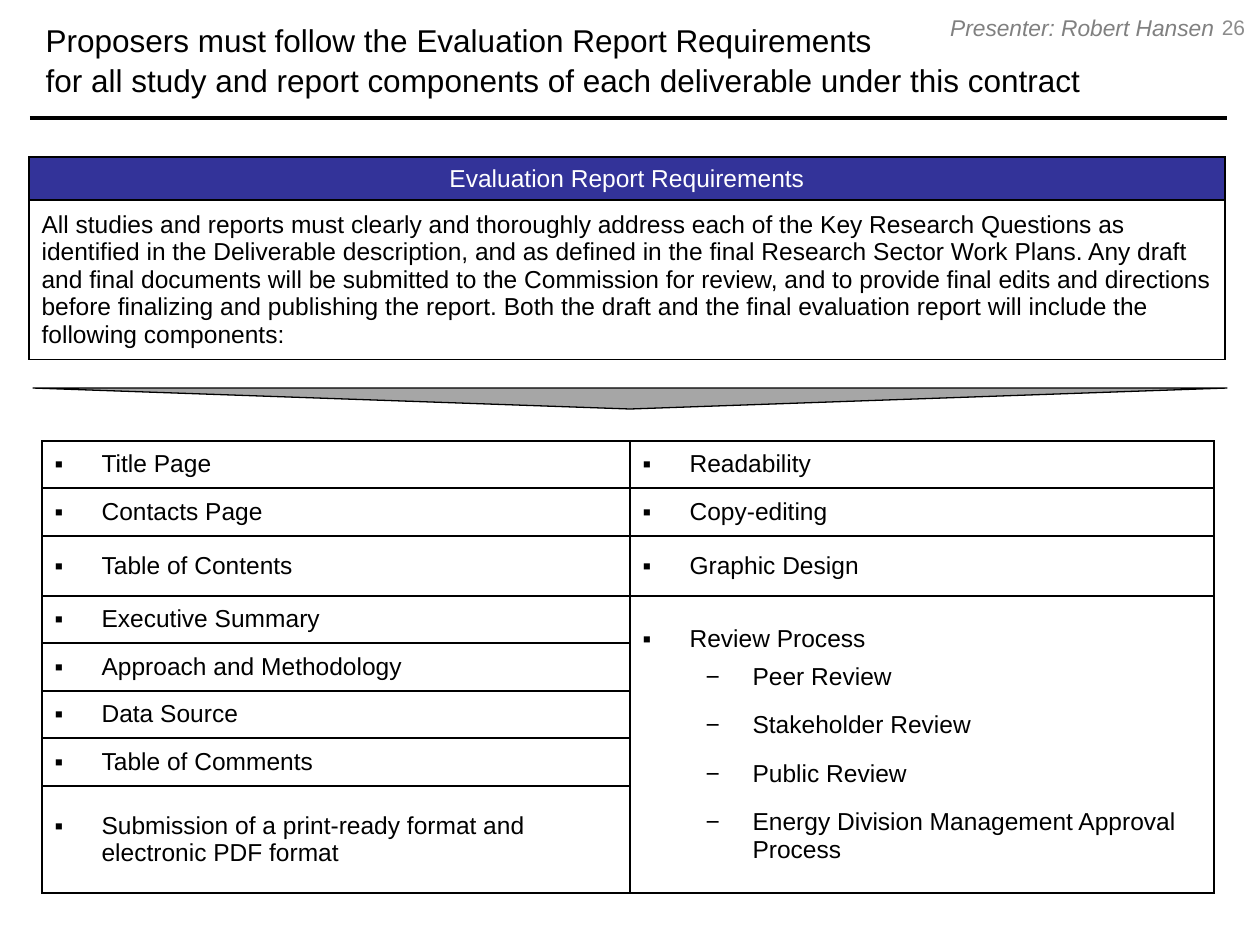
"""Build the slide on evaluation report requirements."""
from lxml.etree import SubElement as Sub
from pptx import Presentation
from pptx.dml.color import RGBColor
from pptx.enum.shapes import MSO_CONNECTOR as Link, MSO_SHAPE as Kind
from pptx.enum.text import MSO_ANCHOR as Anchor, MSO_AUTO_SIZE as Fit, PP_ALIGN as Align
from pptx.oxml.ns import qn
from pptx.util import Pt

PX = 914400 // 126


def hue(code):
    return RGBColor.from_string(code)


def write(frame, lines, size=14, color="000000", italic=False, **form):
    frame.text = "\n".join(lines)
    for para in frame.paragraphs:
        for name, value in form.items():
            setattr(para, name, value)
        font = {"name": "Arial", "size": Pt(size), "bold": False, "italic": italic}
        for name, value in font.items():
            setattr(para.runs[0].font, name, value)
        para.runs[0].font.color.rgb = hue(color)


deck = Presentation()
deck.slide_width, deck.slide_height = 1260 * PX, 945 * PX
slide = deck.slides.add_slide(deck.slide_layouts[5])
shapes = slide.shapes

title = shapes.title
place = {"left": 33, "top": 0, "width": 1191, "height": 118}
for name, value in place.items():
    setattr(title, name, value * PX)
title.text_frame.auto_size = Fit.NONE
title.text_frame.vertical_anchor = Anchor.MIDDLE
write(title.text_frame, [
    "Proposers must follow the Evaluation Report Requirements",
    "for all study and report components of each deliverable under this contract",
], size=18, alignment=Align.LEFT, line_spacing=1.05)

rule = shapes.add_connector(Link.STRAIGHT, 30 * PX, 118 * PX, 1227 * PX, 118 * PX)
rule.line.width = Pt(2)
rule.line.color.rgb = hue("000000")
Sub(rule._element.spPr, qn("a:effectLst"))

notes = [
    ("26", (1207, 2, 53, 50), {"size": 12, "color": "8C8C8C", "alignment": Align.CENTER}),
    ("Presenter: Robert Hansen", (919, 12, 307, 31),
     {"size": 13, "color": "808080", "italic": True, "alignment": Align.RIGHT}),
]
for text, box, form in notes:
    frame = shapes.add_textbox(*[n * PX for n in box]).text_frame
    look = {"word_wrap": True, "vertical_anchor": Anchor.MIDDLE,
            "margin_top": 0, "margin_bottom": 0}
    for name, value in look.items():
        setattr(frame, name, value)
    write(frame, [text], **form)

wedge = shapes.add_shape(Kind.ISOSCELES_TRIANGLE, 33 * PX, 388 * PX, 1194 * PX, 21 * PX)
wedge.rotation = 180
wedge.shadow.inherit = False
wedge.fill.solid()
wedge.fill.fore_color.rgb = hue("A6A6A6")
wedge.line.color.rgb = hue("000000")
wedge.line.width = Pt(0.75)

grids = []
for left, top, cols, rows in [
    (29, 157, [1196], [43, 151]),
    (42, 441, [588, 584], [47, 48, 60, 47, 48, 47, 48, 107]),
]:
    size = [left, top, sum(cols), sum(rows)]
    grid = shapes.add_table(len(rows), len(cols), *[n * PX for n in size]).table
    grid.first_row = grid.horz_banding = False
    for col, wide in zip(grid.columns, cols):
        col.width = wide * PX
    for row, high in zip(grid.rows, rows):
        row.height = high * PX
    for cell in grid.iter_cells():
        cell.vertical_anchor = Anchor.MIDDLE
        for side in ("lnL", "lnR", "lnT", "lnB"):
            edge = Sub(cell._tc.get_or_add_tcPr(), qn(f"a:{side}"), w=str(Pt(1)))
            Sub(Sub(edge, qn("a:solidFill")), qn("a:srgbClr"), val="000000")
        cell.fill.background()
    grids.append(grid)
intro, parts = grids

head = intro.cell(0, 0)
head.fill.solid()
head.fill.fore_color.rgb = hue("333399")
write(head.text_frame, ["Evaluation Report Requirements"], color="FFFFFF",
      alignment=Align.CENTER)
write(intro.cell(1, 0).text_frame, [
    "All studies and reports must clearly and thoroughly address each of the Key "
    "Research Questions as identified in the Deliverable description, and as defined "
    "in the final Research Sector Work Plans. Any draft and final documents will be "
    "submitted to the Commission for review, and to provide final edits and directions "
    "before finalizing and publishing the report. Both the draft and the final "
    "evaluation report will include the following components:"
])

parts.cell(3, 1).merge(parts.cell(7, 1))
items = [
    [["Title Page"], ["Contacts Page"], ["Table of Contents"], ["Executive Summary"],
     ["Approach and Methodology"], ["Data Source"], ["Table of Comments"],
     ["Submission of a print-ready format and electronic PDF format"]],
    [["Readability"], ["Copy-editing"], ["Graphic Design"],
     ["Review Process", "Peer Review", "Stakeholder Review", "Public Review",
      "Energy Division Management Approval Process"]],
]
for col, cells in enumerate(items):
    for row, lines in enumerate(cells):
        frame = parts.cell(row, col).text_frame
        write(frame, lines)
        for rank, para in enumerate(frame.paragraphs):
            mark, left = ("−", 110) if rank else ("▪", 47)
            if rank:
                form = {"level": 1, "space_before": Pt(6), "space_after": Pt(6)}
                for name, value in form.items():
                    setattr(para, name, value)
            props = para._p.get_or_add_pPr()
            props.set("marL", str(left * PX))
            props.set("indent", str(-47 * PX))
            Sub(props, qn("a:buFont"), typeface="Arial")
            Sub(props, qn("a:buChar"), char=mark)

deck.save("out.pptx")
